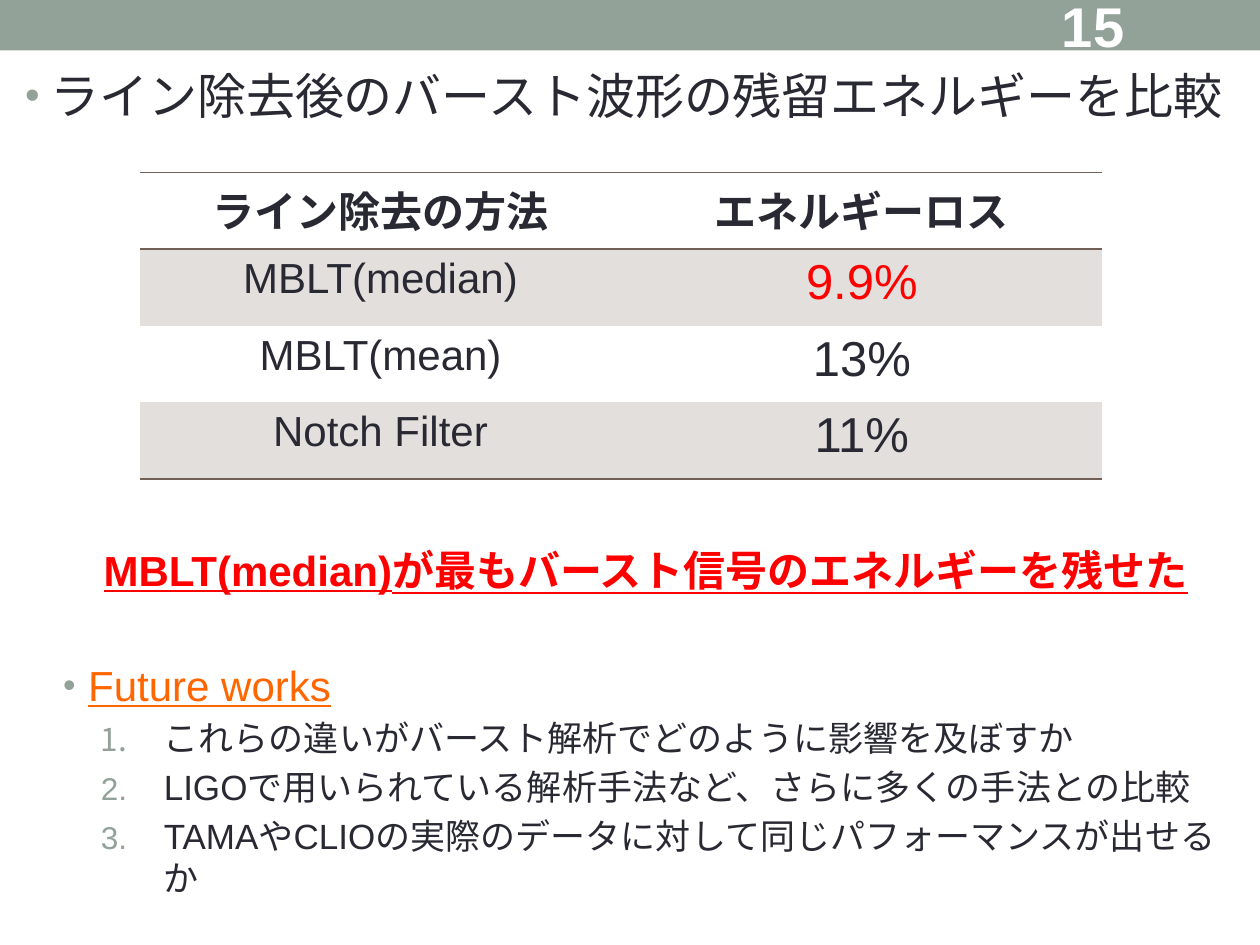
from lxml.etree import SubElement
from pptx import Presentation
from pptx.dml.color import RGBColor
from pptx.enum.lang import MSO_LANGUAGE_ID
from pptx.enum.shapes import MSO_SHAPE
from pptx.enum.text import MSO_ANCHOR, MSO_AUTO_SIZE, PP_ALIGN
from pptx.oxml.ns import qn
from pptx.util import Inches, Pt

COLORS = {
    "sage": "93A299",
    "text": "292934",
    "red": "FF0000",
    "orange": "FF6600",
    "white": "FFFFFF",
    "rule": "726056",
    "stripe": "E3DFDD",
}


def write(paragraph, text, size=24, color="text", bold=False, underline=False,
          align=PP_ALIGN.LEFT, before=0, level=0, margin=0, hanging=0, bullet=None):
    """Fill a paragraph; bullet is a character, or "1." for numbering."""
    paragraph.alignment = align
    paragraph.level = level
    paragraph.space_before = Pt(before)
    run = paragraph.add_run()
    run.text = text
    run.font.name = "Arial"
    run.font.size = Pt(size)
    run.font.bold = bold
    run.font.underline = underline
    run.font.language_id = MSO_LANGUAGE_ID.JAPANESE
    run.font.color.rgb = RGBColor.from_string(COLORS[color])

    props = paragraph._p.get_or_add_pPr()
    props.set("marL", str(Inches(margin)))
    props.set("indent", str(Inches(-hanging)))
    if bullet is None:
        SubElement(props, qn("a:buNone"))
        return
    bullet_color = SubElement(props, qn("a:buClr"))
    SubElement(bullet_color, qn("a:srgbClr"), val=COLORS["sage"])
    SubElement(props, qn("a:buSzPct"), val="90000" if bullet == "1." else "85000")
    SubElement(props, qn("a:buFont"), typeface="Arial")
    if bullet == "1.":
        SubElement(props, qn("a:buAutoNum"), type="arabicPeriod")
    else:
        SubElement(props, qn("a:buChar"), char=bullet)


def add_rule(cell, side):
    """Draw a thin rule on the top (T) or bottom (B) side of a cell."""
    line = SubElement(cell._tc.get_or_add_tcPr(), qn(f"a:ln{side}"), w=str(Pt(1)))
    fill = SubElement(line, qn("a:solidFill"))
    SubElement(fill, qn("a:srgbClr"), val=COLORS["rule"])


prs = Presentation()
prs.slide_width, prs.slide_height = Inches(10), Inches(7.5)
slide = prs.slides.add_slide(prs.slide_layouts[1])
heading, body = slide.placeholders
heading._element.getparent().remove(heading._element)

# Header band
band = slide.shapes.add_shape(MSO_SHAPE.RECTANGLE, 0, 0, prs.slide_width, Inches(0.4))
band.shadow.inherit = False
band.fill.solid()
band.fill.fore_color.rgb = RGBColor.from_string(COLORS["sage"])
band.line.fill.background()

# Page number
page_number = slide.shapes.add_textbox(Inches(8.33), Inches(0.02), Inches(1.17), Inches(0.36))
page_number.text_frame.word_wrap = True
page_number.text_frame.vertical_anchor = MSO_ANCHOR.MIDDLE
write(page_number.text_frame.paragraphs[0], "15", size=32, color="white", bold=True)

# Body list, leaving room for the table after the first line
body.left, body.top = Inches(0.1), Inches(0.47)
body.width, body.height = Inches(9.75), Inches(6.84)
body.text_frame.auto_size = MSO_AUTO_SIZE.NONE
body.text_frame.vertical_anchor = MSO_ANCHOR.TOP
write(body.text_frame.paragraphs[0], "ライン除去後のバースト波形の残留エネルギーを比較",
      size=28, margin=0.2, hanging=0.2, bullet="•")
write(body.text_frame.add_paragraph(), "MBLT(median)が最もバースト信号のエネルギーを残せた",
      color="red", bold=True, underline=True, align=PP_ALIGN.CENTER,
      before=240, level=1, margin=0.3)
write(body.text_frame.add_paragraph(), "Future works", color="orange", underline=True,
      before=37, level=1, margin=0.5, hanging=0.2, bullet="•")
future_works = [
    "これらの違いがバースト解析でどのように影響を及ぼすか",
    "LIGOで用いられている解析手法など、さらに多くの手法との比較",
    "TAMAやCLIOの実際のデータに対して同じパフォーマンスが出せるか",
]
for work in future_works:
    write(body.text_frame.add_paragraph(), work, size=20, before=4, level=2,
          margin=1.1, hanging=0.5, bullet="1.")

# Energy loss table
losses = [
    ("ライン除去の方法", "エネルギーロス"),
    ("MBLT(median)", "9.9%"),
    ("MBLT(mean)", "13%"),
    ("Notch Filter", "11%"),
]
loss_table = slide.shapes.add_table(len(losses), 2, Inches(1.11), Inches(1.37),
                                    Inches(7.64), Inches(2.43)).table
loss_table.first_row = loss_table.horz_banding = False
# "No Style, No Grid"
loss_table._tbl.tblPr.find(qn("a:tableStyleId")).text = "{2D5ABB26-0587-4C30-8999-92F81FD0307C}"
for row, values in enumerate(losses):
    for col, value in enumerate(values):
        cell = loss_table.cell(row, col)
        write(cell.text_frame.paragraphs[0], value, bold=row == 0,
              size=28 if row and col else 24,
              color="red" if value == "9.9%" else "text", align=PP_ALIGN.CENTER)
        if row == 0:
            add_rule(cell, "T")
        if row in (0, len(losses) - 1):
            add_rule(cell, "B")
        if row % 2:
            cell.fill.solid()
            cell.fill.fore_color.rgb = RGBColor.from_string(COLORS["stripe"])
        else:
            cell.fill.background()

prs.save("out.pptx")
